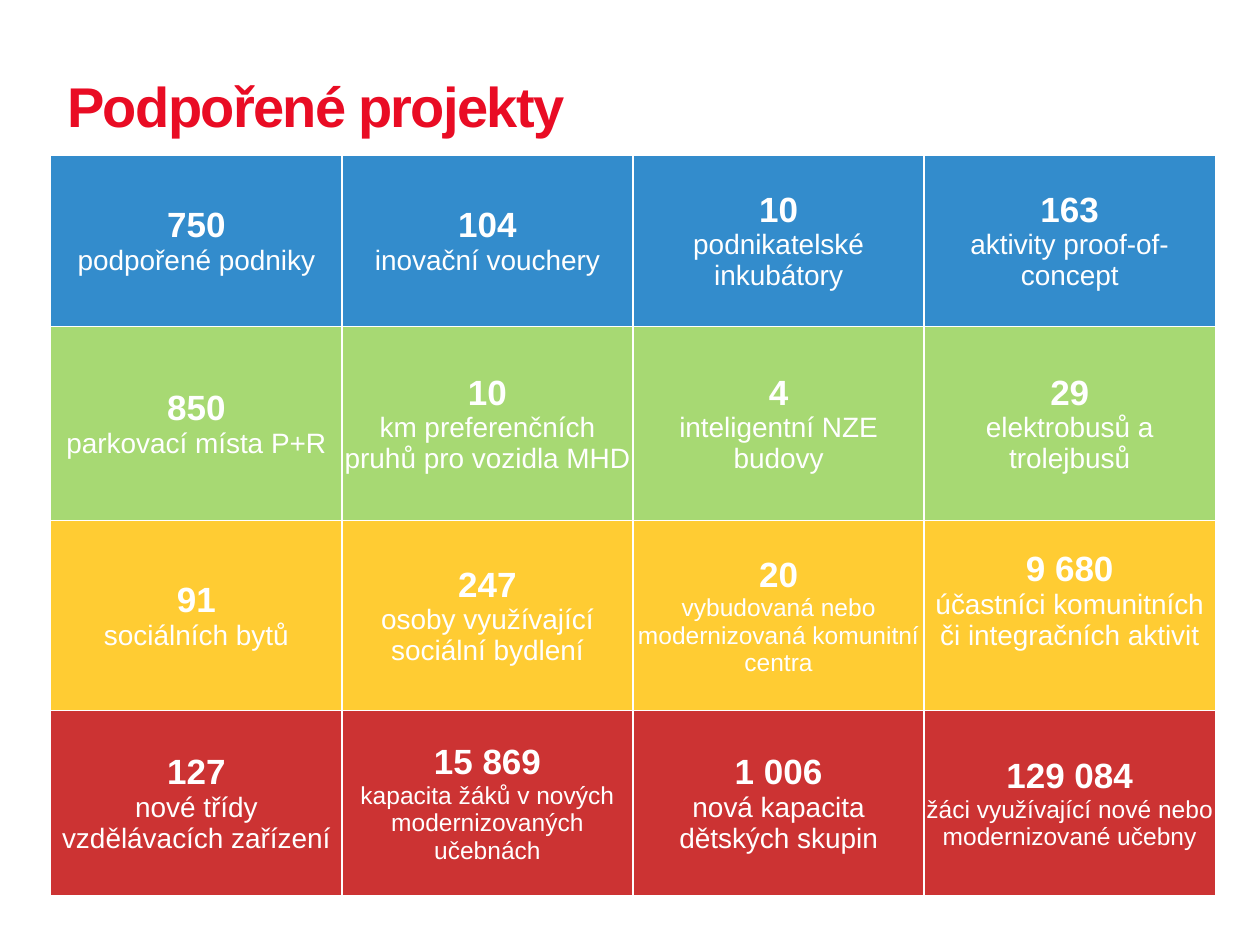
from lxml.etree import SubElement
from pptx import Presentation
from pptx.dml.color import RGBColor
from pptx.enum.text import MSO_ANCHOR as Anchor, MSO_AUTO_SIZE as AutoSize, PP_ALIGN as Align
from pptx.oxml import parse_xml
from pptx.oxml.ns import nsdecls, qn
from pptx.util import Pt

COLORS = {
    "title": "E90C24",
    "white": "FFFFFF",
    "business": "0070C0",
    "transport": "92D050",
    "housing": "FFC000",
    "education": "C00000",
}

# Row colour, row height, then (number, caption) for each cell
ROWS = [
    ("business", 98, [("750", "podpořené podniky"),
                      ("104", "inovační vouchery"),
                      ("10", "podnikatelské inkubátory"),
                      ("163", "aktivity proof-of-concept")]),
    ("transport", 111, [("850", "parkovací místa P+R"),
                        ("10", "km preferenčních pruhů pro vozidla MHD"),
                        ("4", "inteligentní NZE budovy"),
                        ("29", "elektrobusů a trolejbusů")]),
    ("housing", 108.5, [("91", "sociálních bytů"),
                        ("247", "osoby využívající sociální bydlení"),
                        ("20", "vybudovaná nebo modernizovaná komunitní centra"),
                        ("9 680", "účastníci komunitních či integračních aktivit")]),
    ("education", 106, [("127", "nové třídy vzdělávacích zařízení"),
                        ("15 869", "kapacita žáků v nových modernizovaných učebnách"),
                        ("1 006", "nová kapacita dětských skupin"),
                        ("129 084", "žáci využívající nové nebo modernizované učebny")]),
]
SMALL_CAPTIONS = {"20", "15 869", "129 084"}
RAISED = {"9 680"}


class SlideBuilder:
    font = "Arial"
    opacity = 80

    def __init__(self, deck):
        self.page = deck.slides.add_slide(deck.slide_layouts[5])

    def span(self, para, text, size, color, bold=False):
        span = para.add_run()
        span.text = text
        span.font.name = self.font
        span.font.size = Pt(size)
        span.font.bold = bold
        span.font.color.rgb = RGBColor.from_string(COLORS[color])
        return span

    def title(self, text, left, top, width, height):
        box = self.page.shapes.title
        box.left, box.top, box.width, box.height = map(Pt, (left, top, width, height))
        frame = box.text_frame
        frame.auto_size = AutoSize.NONE
        frame.vertical_anchor = Anchor.TOP
        frame.margin_left = frame.margin_right = frame.margin_top = frame.margin_bottom = 0
        para = frame.paragraphs[0]
        para.alignment = Align.LEFT
        para.line_spacing = Pt(55)
        para.space_before = Pt(0)
        span = self.span(para, text, 32, "title", bold=True)
        span.font._element.set("spc", "-100")

    def paint(self, cell, color):
        cell.fill.solid()
        cell.fill.fore_color.rgb = RGBColor.from_string(COLORS[color])
        props = cell._tc.get_or_add_tcPr()
        swatch = props.find(qn("a:solidFill")).find(qn("a:srgbClr"))
        SubElement(swatch, qn("a:alpha")).set("val", str(self.opacity * 1000))
        # Borders come before the fill
        for index, side in enumerate("LRTB"):
            props.insert(index, parse_xml(
                f'<a:ln{side} {nsdecls("a")} w="12700"><a:solidFill>'
                f'<a:srgbClr val="{COLORS["white"]}"/></a:solidFill></a:ln{side}>'))

    def cell(self, cell, color, number, caption):
        cell.vertical_anchor = Anchor.MIDDLE
        cell.margin_left = cell.margin_right = cell.margin_top = Pt(0.75)
        cell.margin_bottom = Pt(18 if number in RAISED else 0)
        frame = cell.text_frame
        para = frame.paragraphs[0]
        para.alignment = Align.CENTER
        self.span(para, number, 20, "white", bold=True)
        para = frame.add_paragraph()
        para.alignment = Align.CENTER
        self.span(para, caption, 14 if number in SMALL_CAPTIONS else 16, "white")
        self.paint(cell, color)

    def table(self, rows, left, top, width):
        count = len(rows[0][2])
        height = sum(row[1] for row in rows)
        grid = self.page.shapes.add_table(
            len(rows), count, Pt(left), Pt(top), Pt(width), Pt(height)).table
        for column in grid.columns:
            column.width = Pt(width / count)
        for r, (color, row_height, entries) in enumerate(rows):
            grid.rows[r].height = Pt(row_height)
            for c, (number, caption) in enumerate(entries):
                self.cell(grid.cell(r, c), color, number, caption)


def main():
    deck = Presentation()
    deck.slide_width, deck.slide_height = Pt(720), Pt(540)
    builder = SlideBuilder(deck)
    builder.title("Podpořené projekty", 38.5, 24, 659.5, 98.5)
    builder.table(ROWS, 29, 88.5, 665.5)
    deck.save("out.pptx")


if __name__ == "__main__":
    main()
